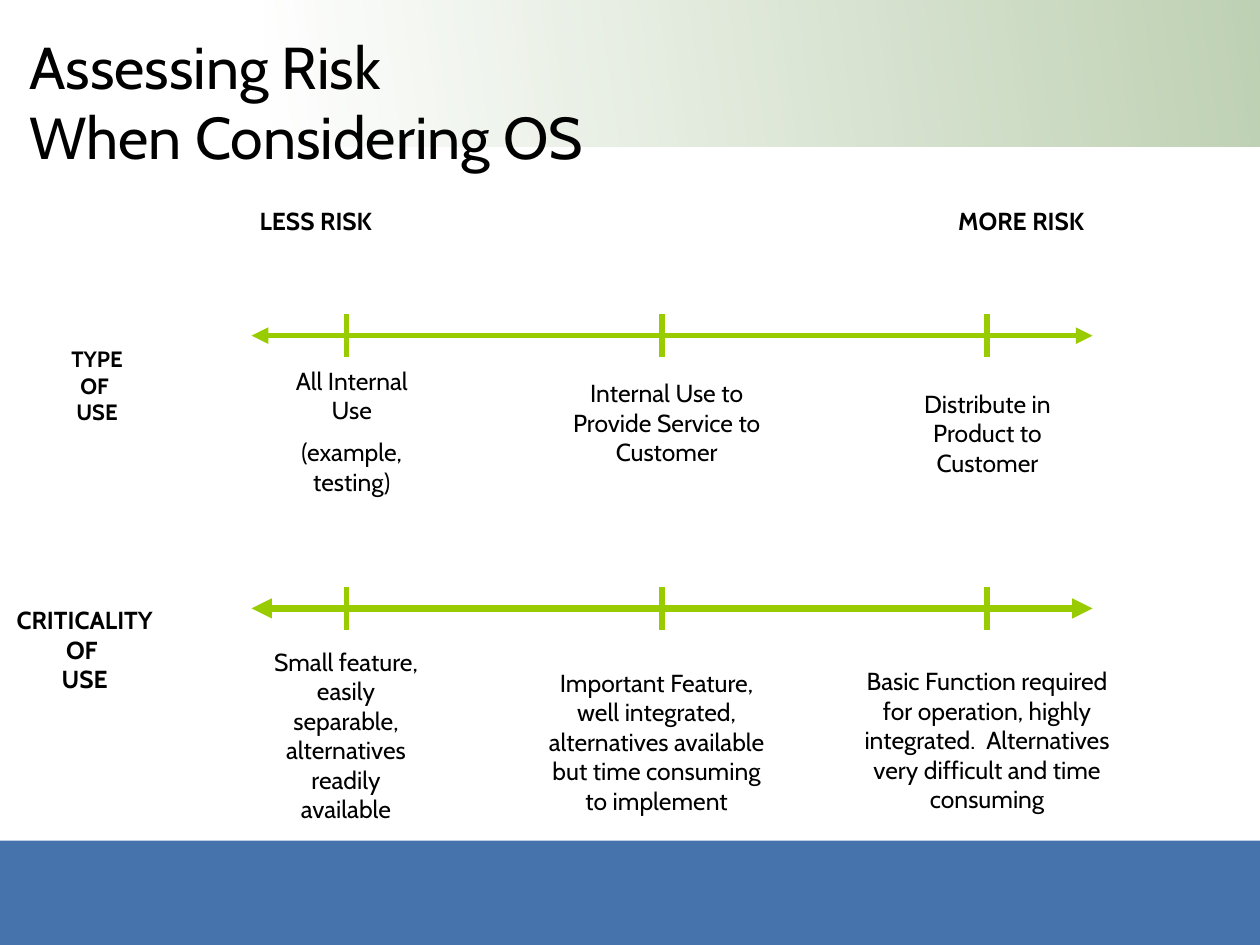
from dataclasses import dataclass

from lxml.etree import SubElement
from pptx import Presentation
from pptx.dml.color import RGBColor
from pptx.enum.shapes import MSO_CONNECTOR, MSO_SHAPE
from pptx.enum.text import MSO_ANCHOR, MSO_AUTO_SIZE, PP_ALIGN
from pptx.oxml.ns import qn
from pptx.util import Inches, Pt


@dataclass(frozen=True)
class Theme:
    font: str = "Cabin"
    text: RGBColor = RGBColor(0x00, 0x00, 0x00)
    scale: RGBColor = RGBColor(0x99, 0xCC, 0x00)
    footer: RGBColor = RGBColor(0x46, 0x73, 0xAB)
    band: tuple = (RGBColor(0xFF, 0xFF, 0xFF), RGBColor(0x50, 0x82, 0x31))
    band_alpha: int = 36000
    title_size: int = 48
    body_size: int = 20
    small_size: int = 18
    tick_width: float = 4.5


THEME = Theme()
SLIDE_W, SLIDE_H = 14.22, 10.67
SCALE_LEFT, SCALE_RIGHT = 2.84, 12.33
TICKS = (3.91, 7.47, 11.14)
TICK_HALF = 0.24
FRAME = {
    "margin_left": Inches(0.14),
    "margin_right": Inches(0.14),
    "margin_top": Inches(0.07),
    "margin_bottom": Inches(0.07),
}

HEADINGS = [
    ((2.44, 2.25, 2.25, 0.48), ["LESS RISK"]),
    ((10.28, 2.25, 2.49, 0.48), ["MORE RISK"]),
]
ROW_LABELS = [
    ((0.61, 3.83, 0.97, 1.05), ["TYPE", "OF ", "USE"], THEME.small_size),
    ((0, 6.76, 1.91, 1.15), ["CRITICALITY", "OF ", "USE"], THEME.body_size),
]
SCALES = [(3.79, 4.5), (6.87, 5.5)]
DESCRIPTIONS = [
    ((3.08, 4.06, 1.78, 1.66), ["All Internal Use", "(example, testing)"]),
    ((6.16, 4.2, 2.73, 1.15), ["Internal Use to Provide Service to Customer"]),
    ((9.96, 4.32, 2.37, 1.15), ["Distribute in Product to Customer"]),
    ((2.84, 7.23, 2.13, 2.16),
     ["Small feature, easily separable, alternatives readily available"]),
    ((5.99, 7.47, 2.84, 1.83),
     ["Important Feature, well integrated, alternatives available "
      "but time consuming to implement"]),
    ((9.48, 7.45, 3.32, 1.83),
     ["Basic Function required for operation, highly integrated.  "
      "Alternatives very difficult and time consuming"]),
]


def set_values(target, values):
    for name, value in values.items():
        setattr(target, name, value)


def style_font(p, size, bold=False):
    set_values(p.font, {"name": THEME.font, "size": Pt(size), "bold": bold})
    p.font.color.rgb = THEME.text


def add_text(s, box, lines, size=THEME.body_size, bold=False, wrap=True, gap=0):
    tf = s.shapes.add_textbox(*map(Inches, box)).text_frame
    set_values(tf, FRAME | {
        "word_wrap": wrap,
        "auto_size": MSO_AUTO_SIZE.SHAPE_TO_FIT_TEXT,
    })
    for i, line in enumerate(lines):
        p = tf.add_paragraph() if i else tf.paragraphs[0]
        p.text = line
        p.alignment = PP_ALIGN.CENTER
        if i and gap:
            p.space_before = Pt(gap)
        style_font(p, size, bold)


def add_block(s, box):
    sp = s.shapes.add_shape(MSO_SHAPE.RECTANGLE, *map(Inches, box))
    sp.shadow.inherit = False
    sp.line.fill.background()
    return sp


def add_header_band(s):
    band = add_block(s, (2.99, 0, SLIDE_W - 2.99, 1.65))
    band.fill.gradient()
    band.fill.gradient_angle = 8
    for stop, color in zip(band.fill.gradient_stops, THEME.band):
        stop.color.rgb = color
    for color in band._element.spPr.iter(qn("a:srgbClr")):
        SubElement(color, qn("a:alpha"), val=str(THEME.band_alpha))


def add_footer(s):
    fill = add_block(s, (0, 9.49, SLIDE_W, SLIDE_H - 9.49)).fill
    fill.solid()
    fill.fore_color.rgb = THEME.footer


def add_title(s, text):
    title = s.shapes.title
    s.shapes._spTree.append(title._element)
    set_values(title, {
        "left": Inches(0.19),
        "top": Inches(0.25),
        "width": Inches(12.8),
        "height": Inches(1.78),
    })
    tf = title.text_frame
    set_values(tf, FRAME | {
        "word_wrap": True,
        "auto_size": MSO_AUTO_SIZE.NONE,
        "vertical_anchor": MSO_ANCHOR.MIDDLE,
    })
    p = tf.paragraphs[0]
    p.text = text
    p.alignment = PP_ALIGN.LEFT
    style_font(p, THEME.title_size)


def add_line(s, start, end, width, arrows=False):
    line = s.shapes.add_connector(
        MSO_CONNECTOR.STRAIGHT, *map(Inches, (*start, *end)))
    line.line.color.rgb = THEME.scale
    line.line.width = Pt(width)
    if arrows:
        for tag in ("a:headEnd", "a:tailEnd"):
            SubElement(line.line._get_or_add_ln(), qn(tag), type="triangle")
    SubElement(line._element.spPr, qn("a:effectLst"))


def add_scale(s, y, width):
    add_line(s, (SCALE_LEFT, y), (SCALE_RIGHT, y), width, arrows=True)
    for x in TICKS:
        add_line(s, (x, y - TICK_HALF), (x, y + TICK_HALF), THEME.tick_width)


def main():
    prs = Presentation()
    prs.slide_width, prs.slide_height = Inches(SLIDE_W), Inches(SLIDE_H)
    s = prs.slides.add_slide(prs.slide_layouts[5])
    add_header_band(s)
    add_footer(s)
    add_title(s, "Assessing Risk\vWhen Considering OS")
    for box, lines in HEADINGS:
        add_text(s, box, lines, bold=True)
    for y, width in SCALES:
        add_scale(s, y, width)
    for box, lines, size in ROW_LABELS:
        add_text(s, box, lines, size, bold=True, wrap=False)
    for box, lines in DESCRIPTIONS:
        add_text(s, box, lines, gap=10)
    prs.save("out.pptx")


if __name__ == "__main__":
    main()
